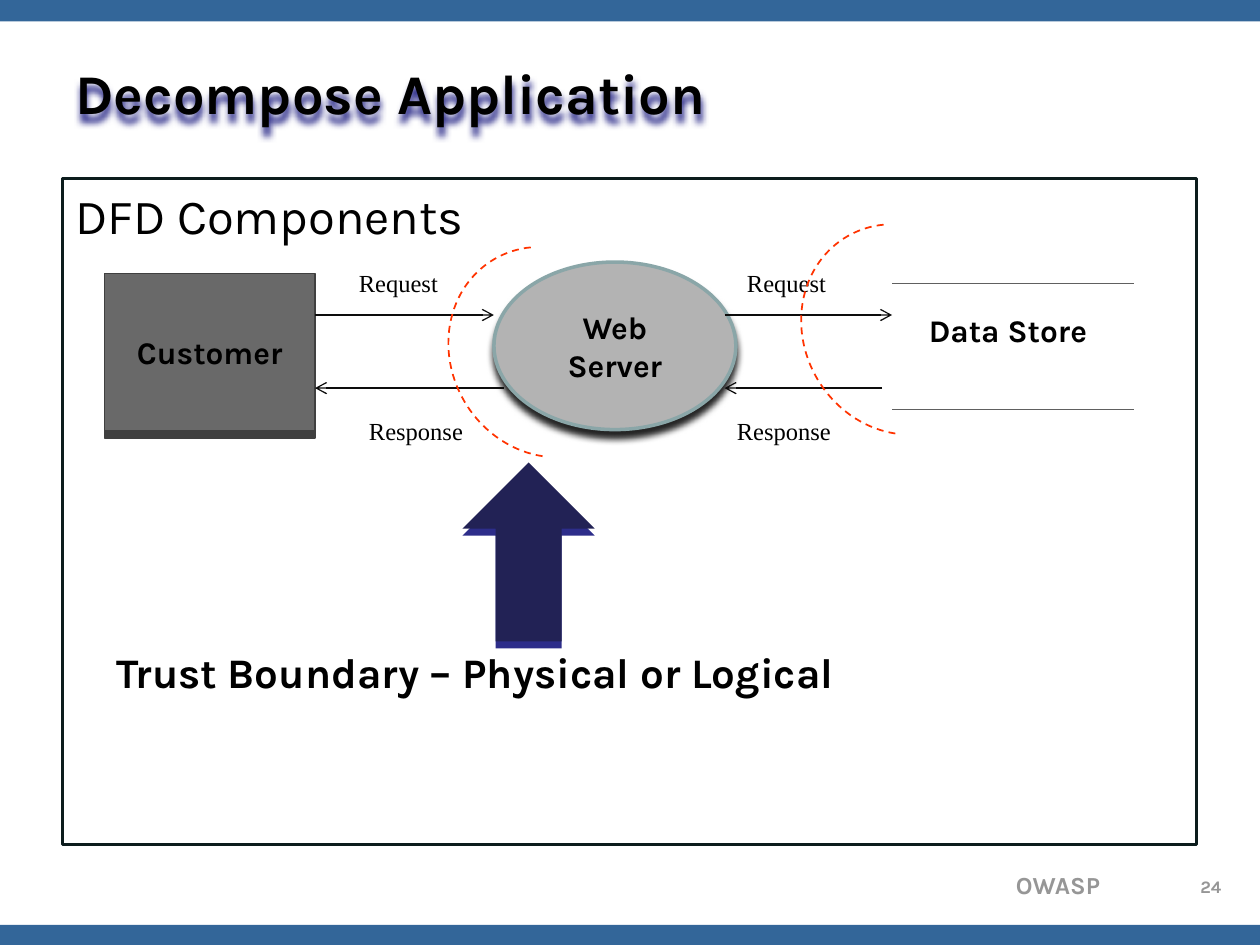
from lxml import etree
from pptx import Presentation
from pptx.dml.color import RGBColor
from pptx.enum.dml import MSO_LINE
from pptx.enum.shapes import MSO_CONNECTOR, MSO_SHAPE
from pptx.enum.text import MSO_ANCHOR, PP_ALIGN
from pptx.oxml.ns import qn
from pptx.util import Inches, Pt

LEFT, CENTER, RIGHT = PP_ALIGN.LEFT, PP_ALIGN.CENTER, PP_ALIGN.RIGHT
TOP, MIDDLE = MSO_ANCHOR.TOP, MSO_ANCHOR.MIDDLE
RECTANGLE, OVAL, ARC = MSO_SHAPE.RECTANGLE, MSO_SHAPE.OVAL, MSO_SHAPE.ARC
DOWN_ARROW = MSO_SHAPE.DOWN_ARROW
STRAIGHT = MSO_CONNECTOR.STRAIGHT
DASH = MSO_LINE.DASH
color = RGBColor.from_string


def write(shape, text, size, bold=True, align=LEFT, anchor=TOP, font="Karla", ink="000000"):
    frame = shape.text_frame
    frame.word_wrap = True
    frame.vertical_anchor = anchor
    paragraph = frame.paragraphs[0]
    paragraph.text = text
    paragraph.alignment = align
    paragraph.font.name = font
    paragraph.font.size = Pt(size)
    paragraph.font.bold = bold
    paragraph.font.color.rgb = color(ink)


def drop_shadow(shape, shade, blur):
    shape.shadow.inherit = False
    effects = shape._element.spPr.find(qn("a:effectLst"))
    outer = etree.SubElement(effects, qn("a:outerShdw"), blurRad=str(Pt(blur)),
                             dist=str(Pt(4)), dir="5400000", algn="ctr", rotWithShape="0")
    etree.SubElement(outer, qn("a:srgbClr"), val=shade)


deck = Presentation()
deck.slide_width, deck.slide_height = Inches(10), Inches(7.5)
slide = deck.slides.add_slide(deck.slide_layouts[6])
shapes = slide.shapes

for top in (0, 7.34):
    band = shapes.add_shape(RECTANGLE, 0, Inches(top), Inches(10), Inches(0.17))
    band.shadow.inherit = False
    band.fill.solid()
    band.fill.fore_color.rgb = color("336699")
    band.line.fill.background()

footer = shapes.add_textbox(Inches(6.22), Inches(6.86), Inches(2.61), Inches(0.33))
write(footer, "OWASP", 14, align=RIGHT, ink="969696")

title = shapes.add_textbox(Inches(0.5), Inches(0.3), Inches(9), Inches(0.87))
write(title, "Decompose Application", 32, anchor=MIDDLE)
drop_shadow(title, "2D2D8A", 4)

panel = shapes.add_shape(RECTANGLE, Inches(0.5), Inches(1.42), Inches(9), Inches(5.28))
panel.shadow.inherit = False
panel.fill.background()
panel.line.color.rgb = color("0C1C1D")
panel.line.width = Pt(1.75)
write(panel, "DFD Components", 28, bold=False)

page_number = shapes.add_textbox(Inches(9.39), Inches(6.9), Inches(0.44), Inches(0.25))
write(page_number, "24", 10, align=CENTER, ink="969696")

customer = shapes.add_shape(RECTANGLE, Inches(0.83), Inches(2.17), Inches(1.67), Inches(1.25))
customer.fill.solid()
customer.fill.fore_color.rgb = color("696969")
customer.line.color.rgb = color("404040")
customer.line.width = Pt(1)
drop_shadow(customer, "404040", 0)
write(customer, "Customer", 18, align=CENTER, anchor=MIDDLE)

server = shapes.add_shape(OVAL, Inches(3.92), Inches(2.08), Inches(1.92), Inches(1.33))
server.fill.solid()
server.fill.fore_color.rgb = color("B3B3B3")
server.line.color.rgb = color("8AA6A8")
server.line.width = Pt(2)
drop_shadow(server, "262626", 4)
write(server, "Web Server", 18, align=CENTER, anchor=MIDDLE)

data_store = shapes.add_group_shape()
for y in (2.25, 3.25):
    edge = data_store.shapes.add_connector(STRAIGHT, Inches(7.08), Inches(y), Inches(9), Inches(y))
    edge.line.color.rgb = color("606060")
    edge.line.width = Pt(0.75)
    etree.SubElement(edge._element.spPr, qn("a:effectLst"))
store_name = data_store.shapes.add_textbox(Inches(7), Inches(2.42), Inches(2), Inches(0.4))
write(store_name, "Data Store", 18, align=CENTER)

for start, end, y in ((2.5, 3.92, 2.5), (4, 2.5, 3.08), (5.75, 7.08, 2.5), (7, 5.75, 3.08)):
    flow = shapes.add_connector(STRAIGHT, Inches(start), Inches(y), Inches(end), Inches(y))
    flow.line.color.rgb = color("0D0D0D")
    flow.line.width = Pt(0.75)
    etree.SubElement(flow.line._get_or_add_ln(), qn("a:tailEnd"), type="arrow")
    etree.SubElement(flow._element.spPr, qn("a:effectLst"))

for label, x, y in (("Request", 2.75, 2.08), ("Request", 5.83, 2.08),
                    ("Response", 2.83, 3.25), ("Response", 5.75, 3.25)):
    flow_name = shapes.add_textbox(Inches(x), Inches(y), Inches(1.17), Inches(0.34))
    write(flow_name, label, 14, bold=False, font="Times New Roman")

for x, y in ((6.38, 1.76), (3.58, 1.94)):
    boundary = shapes.add_shape(ARC, Inches(x), Inches(y), Inches(1.55), Inches(1.71))
    boundary.shadow.inherit = False
    boundary.adjustments[0] = 74.27
    boundary.adjustments[1] = 174.63
    boundary.rotation = 329.6
    boundary.fill.background()
    boundary.line.color.rgb = color("FF3300")
    boundary.line.width = Pt(1)
    boundary.line.dash_style = DASH

boundary_note = shapes.add_textbox(Inches(0.83), Inches(5.08), Inches(8.17), Inches(0.5))
write(boundary_note, "Trust Boundary – Physical or Logical", 24)

pointer = shapes.add_shape(DOWN_ARROW, Inches(3.67), Inches(3.67), Inches(1.05), Inches(1.42))
pointer.rotation = 180
pointer.fill.solid()
pointer.fill.fore_color.rgb = color("222255")
pointer.line.fill.background()
drop_shadow(pointer, "2D2D8A", 0)

deck.save("out.pptx")
